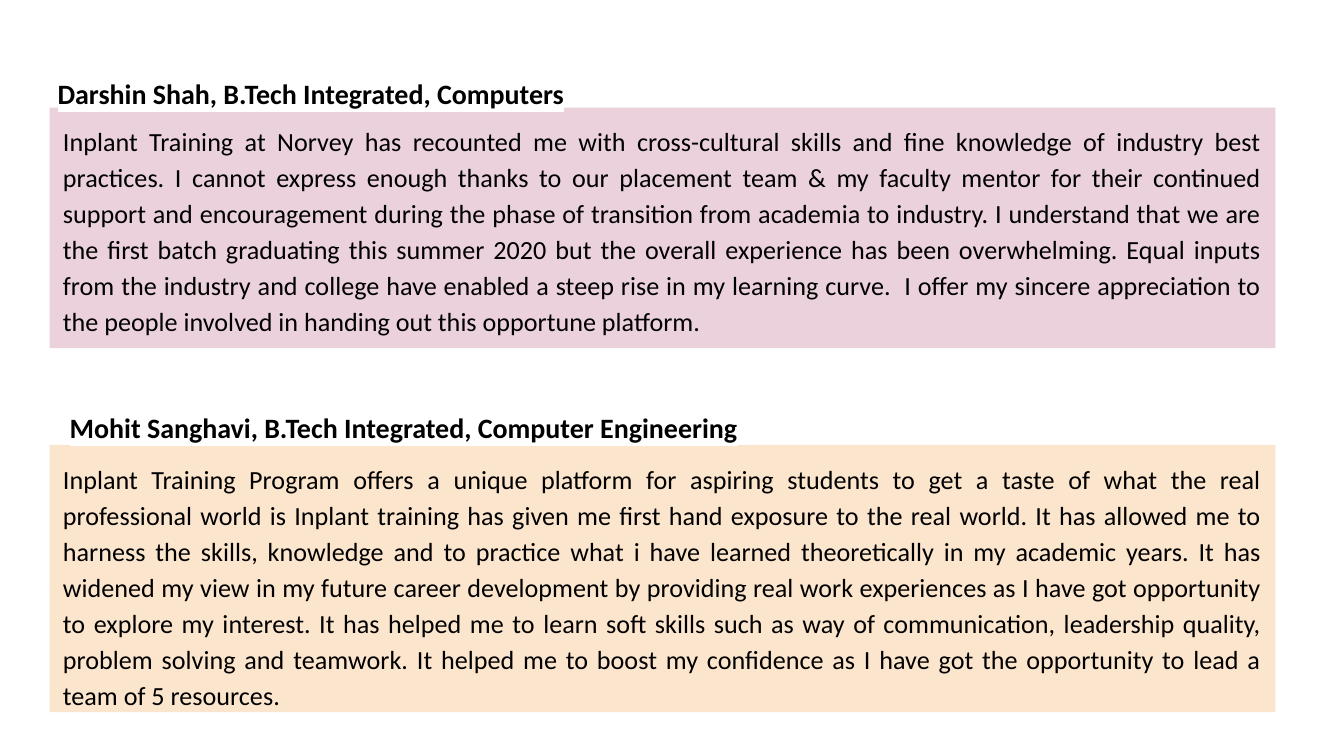
import pptx
import pptx.dml.color
import pptx.enum.shapes
import pptx.enum.text
import pptx.oxml
import pptx.oxml.ns
import pptx.util

Inches = pptx.util.Inches

# Each entry: heading, heading place, statement, panel place, panel colour
TESTIMONIALS = [
    (
        "Darshin Shah, B.Tech Integrated, Computers",
        (0.33, 0.43, 4.02, 0.37),
        "Inplant Training at Norvey has recounted me with cross-cultural skills "
        "and fine knowledge of industry best practices. I cannot express enough "
        "thanks to our placement team & my faculty mentor for their continued "
        "support and encouragement during the phase of transition from academia "
        "to industry. I understand that we are the first batch graduating this "
        "summer 2020 but the overall experience has been overwhelming. Equal "
        "inputs from the industry and college have enabled a steep rise in my "
        "learning curve.  I offer my sincere appreciation to the people involved "
        "in handing out this opportune platform.",
        (0.37, 0.8, 9.12, 1.79),
        "EAD1DC",
    ),
    (
        "Mohit Sanghavi, B.Tech Integrated, Computer Engineering",
        (0.42, 2.92, 5.29, 0.38),
        "Inplant Training Program offers a unique platform for aspiring students "
        "to get a taste of what the real professional world is Inplant training "
        "has given me first hand exposure to the real world. It has allowed me to "
        "harness the skills, knowledge and to practice what i have learned "
        "theoretically in my academic years. It has widened my view in my future "
        "career development by providing real work experiences as I have got "
        "opportunity to explore my interest. It has helped me to learn soft skills "
        "such as way of communication, leadership quality, problem solving and "
        "teamwork. It helped me to boost my confidence as I have got the "
        "opportunity to lead a team of 5 resources.",
        (0.37, 3.31, 9.12, 1.99),
        "FCE5CD",
    ),
]


def color(hex_code):
    return pptx.dml.color.RGBColor.from_string(hex_code)


def write_text(box, text, size, bold=False):
    """Fill the box with one justified paragraph and return its run."""
    frame = box.text_frame
    frame.word_wrap = True
    frame.vertical_anchor = pptx.enum.text.MSO_ANCHOR.TOP
    frame.margin_left = frame.margin_right = Inches(0.1)
    frame.margin_top = frame.margin_bottom = Inches(0.1)
    frame.text = text
    para = frame.paragraphs[0]
    para.alignment = pptx.enum.text.PP_ALIGN.JUSTIFY
    para.line_spacing = 1.15
    para.space_after = pptx.util.Pt(10)
    span = para.runs[0]
    span.font.name = "Calibri"
    span.font.size = pptx.util.Pt(size)
    span.font.bold = bold
    span.font.color.rgb = color("000000")
    return span


def highlight(span, hex_code):
    mark = pptx.oxml.parse_xml(
        f'<a:highlight {pptx.oxml.ns.nsdecls("a")}>'
        f'<a:srgbClr val="{hex_code}"/></a:highlight>'
    )
    fill = span.font._element.find(pptx.oxml.ns.qn("a:solidFill"))
    fill.addnext(mark)


def add_panel(page, place, fill, text):
    rectangle = pptx.enum.shapes.MSO_SHAPE.RECTANGLE
    panel = page.shapes.add_shape(rectangle, *map(Inches, place))
    panel.shadow.inherit = False
    panel.fill.solid()
    panel.fill.fore_color.rgb = color(fill)
    panel.line.fill.background()
    write_text(panel, text, 14)


def add_heading(page, place, text):
    box = page.shapes.add_textbox(*map(Inches, place))
    highlight(write_text(box, text, 15, bold=True), "FFFFFF")


def main():
    deck = pptx.Presentation()
    deck.slide_width = Inches(10)
    deck.slide_height = deck.slide_width * 9 // 16
    page = deck.slides.add_slide(deck.slide_layouts[6])
    for heading, heading_place, statement, panel_place, fill in TESTIMONIALS:
        add_panel(page, panel_place, fill, statement)
        add_heading(page, heading_place, heading)
    deck.save("out.pptx")


if __name__ == "__main__":
    main()
